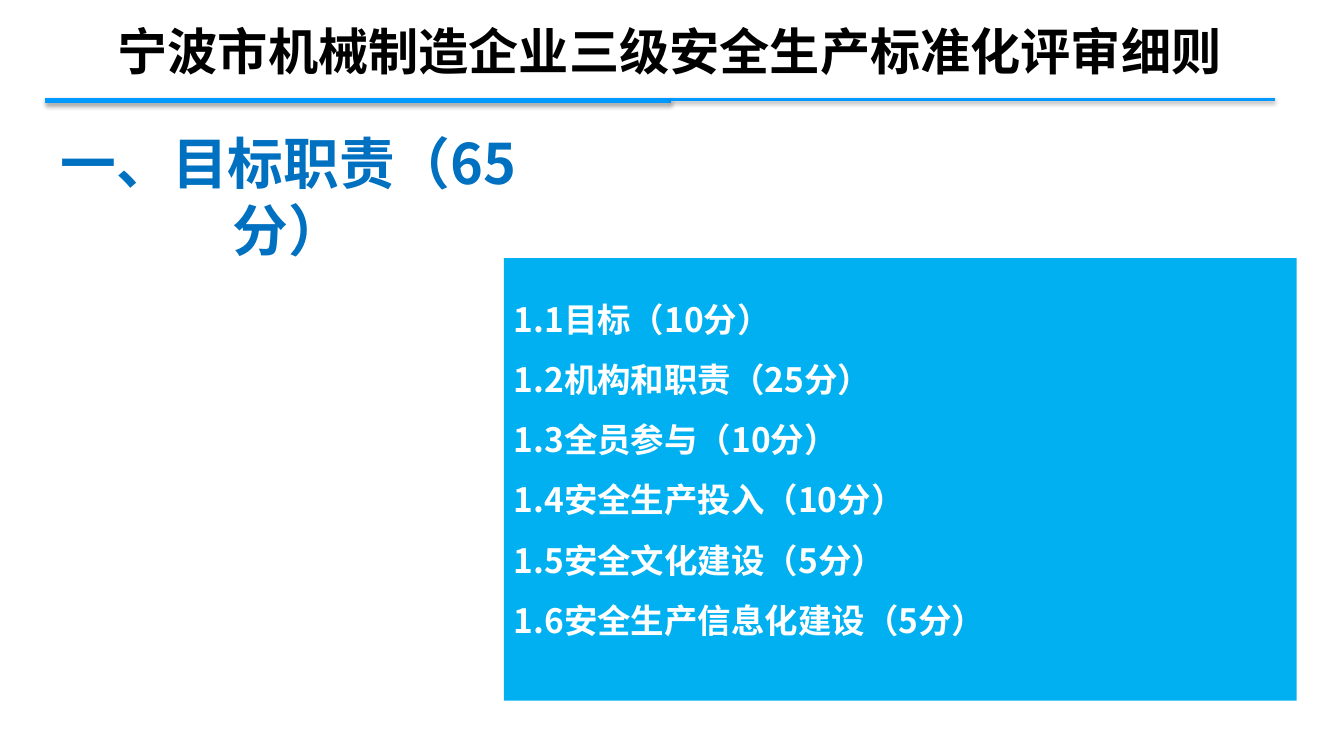
from lxml import etree
from pptx import Presentation
from pptx.dml.color import RGBColor
from pptx.enum.shapes import MSO_CONNECTOR, MSO_SHAPE
from pptx.enum.text import MSO_ANCHOR, PP_ALIGN
from pptx.oxml.ns import qn
from pptx.util import Pt

PX = 9144
BLACK = RGBColor(0x00, 0x00, 0x00)
WHITE = RGBColor(0xFF, 0xFF, 0xFF)
RULE_BLUE = RGBColor(0x00, 0x99, 0xFF)
HEADING_BLUE = RGBColor(0x00, 0x70, 0xC0)
PANEL_BLUE = RGBColor(0x00, 0xB0, 0xF0)
CJK = "Noto Sans CJK SC"


def place(sp, left, top, width, height):
    box = {"left": left, "top": top, "width": width, "height": height}
    for name, value in box.items():
        setattr(sp, name, value * PX)


def write(p, text, size, font, color, align):
    p.alignment = align
    r = p.add_run()
    r.text = text
    for name, value in {"size": Pt(size), "name": font, "bold": True}.items():
        setattr(r.font, name, value)
    r.font.color.rgb = color
    etree.SubElement(r.font._element, qn("a:ea"), typeface=CJK)


prs = Presentation()
prs.slide_width = 1339 * PX
prs.slide_height = 750 * PX
s = prs.slides.add_slide(prs.slide_layouts[5])

rules = [(45, 669, 100, 4, 35, 1.8), (669, 1270, 99, 2, 38, 1.6)]
for start, end, y, weight, alpha, distance in rules:
    rule = s.shapes.add_connector(
        MSO_CONNECTOR.STRAIGHT, start * PX, y * PX, end * PX, y * PX)
    rule.line.color.rgb = RULE_BLUE
    rule.line.width = Pt(weight)
    effects = etree.SubElement(rule._element.spPr, qn("a:effectLst"))
    shadow = etree.SubElement(
        effects, qn("a:outerShdw"), blurRad=str(Pt(3.1)),
        dist=str(Pt(distance)), dir="5400000", rotWithShape="0")
    black = etree.SubElement(shadow, qn("a:srgbClr"), val=str(BLACK))
    etree.SubElement(black, qn("a:alpha"), val=str(alpha * 1000))

panel = s.shapes.add_shape(MSO_SHAPE.RECTANGLE, 0, 0, 0, 0)
place(panel, 502, 257, 790, 441)
panel.shadow.inherit = False
panel.fill.solid()
panel.fill.fore_color.rgb = PANEL_BLUE
panel.line.fill.background()
tf = panel.text_frame
for name, value in {"word_wrap": True, "vertical_anchor": MSO_ANCHOR.MIDDLE,
                    "margin_bottom": 45 * PX}.items():
    setattr(tf, name, value)
items = [("目标", 10), ("机构和职责", 25), ("全员参与", 10),
         ("安全生产投入", 10), ("安全文化建设", 5), ("安全生产信息化建设", 5)]
for i, (item, points) in enumerate(items, 1):
    p = tf.paragraphs[0] if i == 1 else tf.add_paragraph()
    p.line_spacing = 1.5
    write(p, f"1.{i}{item}（{points}分）", 24, CJK, WHITE, PP_ALIGN.LEFT)

heading = s.shapes.add_textbox(0, 0, 0, 0)
place(heading, 20, 123, 535, 77)
heading.text_frame.word_wrap = True
write(heading.text_frame.paragraphs[0], "一、目标职责（65分）", 40, CJK,
      HEADING_BLUE, PP_ALIGN.CENTER)

title = s.shapes.title
place(title, 42, 13, 1250, 75)
title.text_frame.vertical_anchor = MSO_ANCHOR.MIDDLE
write(title.text_frame.paragraphs[0], "宁波市机械制造企业三级安全生产标准化评审细则",
      36, "Calibri", BLACK, PP_ALIGN.CENTER)

prs.save("out.pptx")
